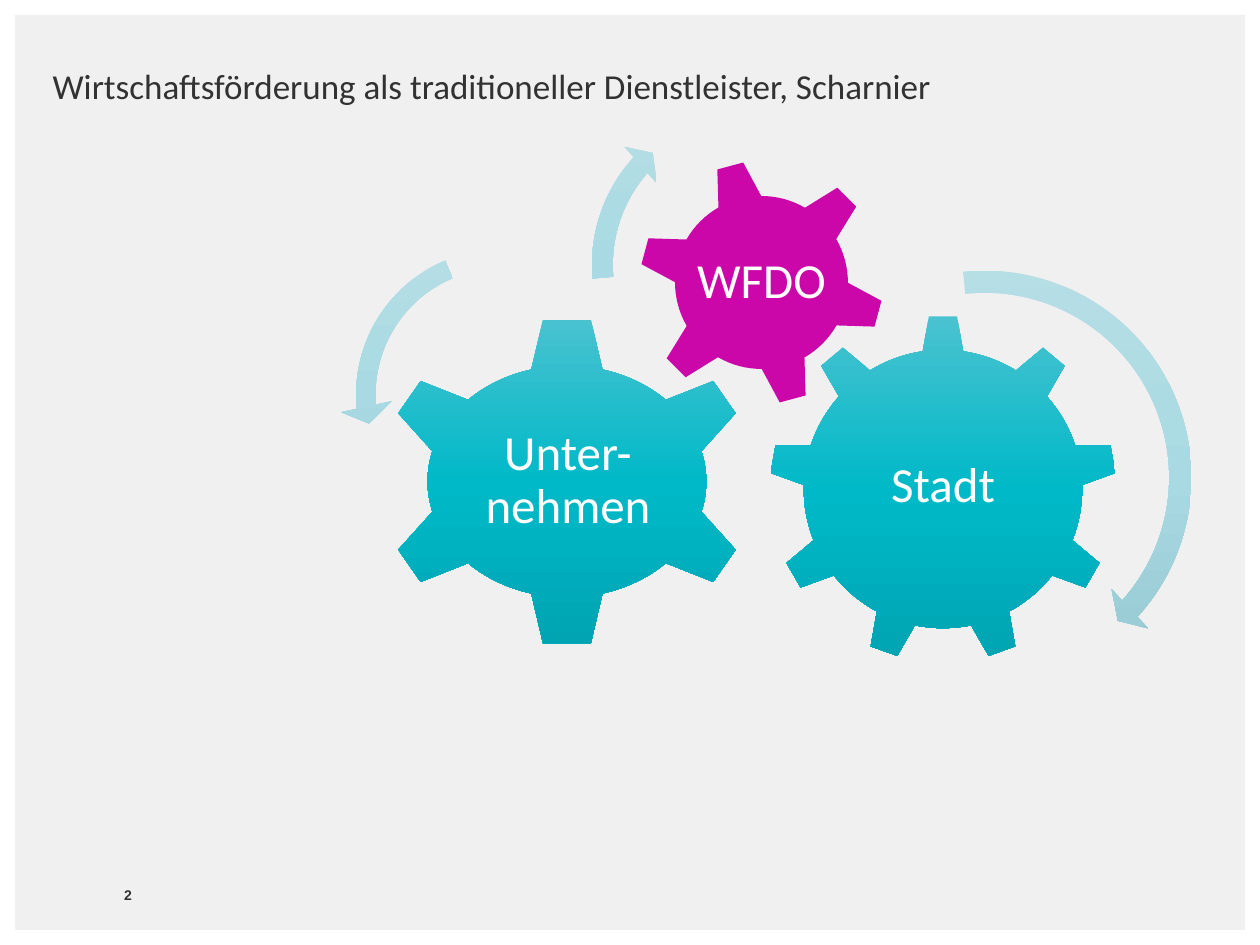
from copy import deepcopy
from dataclasses import dataclass

from pptx import Presentation
from pptx.dml.color import RGBColor
from pptx.enum.shapes import MSO_SHAPE
from pptx.enum.text import MSO_ANCHOR, PP_ALIGN
from pptx.oxml.ns import qn
from pptx.util import Emu, Pt

PX = 914400 / 126  # EMU in one px

PANEL = RGBColor(0xF0, 0xF0, 0xF0)
INK = RGBColor(0x32, 0x32, 0x32)
WHITE = RGBColor(0xFF, 0xFF, 0xFF)
PINK = RGBColor(0xCB, 0x07, 0xA9)
TEAL = (RGBColor(0x4B, 0xC2, 0xD0), RGBColor(0x00, 0xB9, 0xC8), RGBColor(0x00, 0xA4, 0xB2))
PALE = (RGBColor(0xB6, 0xDE, 0xE5), RGBColor(0xA9, 0xDA, 0xE3), RGBColor(0x92, 0xC5, 0xCD))

Box = tuple[int, int, int, int]
Paint = RGBColor | tuple[RGBColor, ...]


@dataclass
class Gear:
    kind: MSO_SHAPE
    box: Box
    paint: Paint
    label: str
    area: Box
    turn: int = 0


@dataclass
class Arrow:
    kind: MSO_SHAPE
    box: Box
    bends: tuple[float, ...]


GEARS = [
    Gear(MSO_SHAPE.GEAR_9, (769, 315, 348, 348), TEAL, "Stadt", (839, 397, 208, 179)),
    Gear(MSO_SHAPE.GEAR_6, (378, 316, 378, 331), TEAL, "Unter-nehmen", (469, 399, 198, 164)),
    Gear(MSO_SHAPE.GEAR_6, (638, 159, 247, 247), PINK, "WFDO", (692, 213, 139, 139), 345),
]
ARROWS = [
    Arrow(MSO_SHAPE.CIRCULAR_ARROW, (762, 255, 445, 445), (0.05, 2.99, 25.25, 158.43, 0.06)),
    Arrow(MSO_SHAPE.LEFT_CIRCULAR_ARROW, (340, 233, 323, 323), (0.06, 4.3, 104.89, 148.38, 0.08)),
    Arrow(MSO_SHAPE.CIRCULAR_ARROW, (578, 91, 348, 348), (0.06, 3.94, 133.14, 105.08, 0.07)),
]


def emu(box: Box) -> list[Emu]:
    return [Emu(round(n * PX)) for n in box]


def draw(shapes, kind: MSO_SHAPE, box: Box, paint: Paint):
    """Add a borderless shape with a plain fill or a downward gradient."""
    shape = shapes.add_shape(kind, *emu(box))
    shape.shadow.inherit = False
    shape.line.fill.background()
    fill = shape.fill
    if isinstance(paint, RGBColor):
        fill.solid()
        fill.fore_color.rgb = paint
        return shape
    fill.gradient()
    fill.gradient_angle = 270
    stops = shape._element.spPr.find(".//" + qn("a:gsLst"))
    stops.append(deepcopy(stops[0]))
    for i, (stop, color) in enumerate(zip(fill.gradient_stops, paint)):
        stop.position = i / (len(paint) - 1)
        stop.color.rgb = color
    return shape


def write(shape, text: str, frame: dict, para: dict, font: dict, color: RGBColor) -> None:
    """Fill a text shape and apply its format values."""
    body = shape.text_frame
    body.text = text
    line = body.paragraphs[0]
    for part, values in ((body, frame), (line, para), (line.font, font)):
        for name, value in values.items():
            setattr(part, name, value)
    line.font.color.rgb = color


def pad(px: int) -> dict:
    sides = ("left", "top", "right", "bottom")
    return {f"margin_{side}": Emu(round(px * PX)) for side in sides}


def main() -> None:
    prs = Presentation()
    prs.slide_width, prs.slide_height = emu((1260, 945))
    slide = prs.slides.add_slide(prs.slide_layouts[5])
    shapes = slide.shapes

    # Panel and page number
    draw(shapes, MSO_SHAPE.RECTANGLE, (15, 15, 1230, 915), PANEL)
    page = shapes.add_textbox(*emu((124, 881, 30, 35)))
    write(page, "2", {"word_wrap": True, **pad(0)}, {"line_spacing": Pt(13)},
          {"size": Pt(8), "name": "Arial", "bold": True}, INK)

    # Gears with their labels
    for gear in GEARS:
        draw(shapes, gear.kind, gear.box, gear.paint).rotation = gear.turn
        label = shapes.add_textbox(*emu(gear.area))
        write(label, gear.label,
              {"word_wrap": True, "vertical_anchor": MSO_ANCHOR.MIDDLE, **pad(5)},
              {"alignment": PP_ALIGN.CENTER, "line_spacing": 0.9},
              {"size": Pt(28), "name": "Calibri"}, WHITE)

    # Turning arrows
    for arrow in ARROWS:
        shape = draw(shapes, arrow.kind, arrow.box, PALE)
        for i, bend in enumerate(arrow.bends):
            shape.adjustments[i] = bend

    # Title, brought in front of the panel
    title = shapes.title
    title.left, title.top, title.width, title.height = emu((40, 58, 915, 55))
    write(title, "Wirtschaftsförderung als traditioneller Dienstleister, Scharnier",
          {"word_wrap": False, "vertical_anchor": MSO_ANCHOR.TOP},
          {"alignment": PP_ALIGN.LEFT}, {"size": Pt(20), "name": "Calibri"}, INK)
    shapes._spTree.append(title._element)

    prs.save("out.pptx")


if __name__ == "__main__":
    main()
